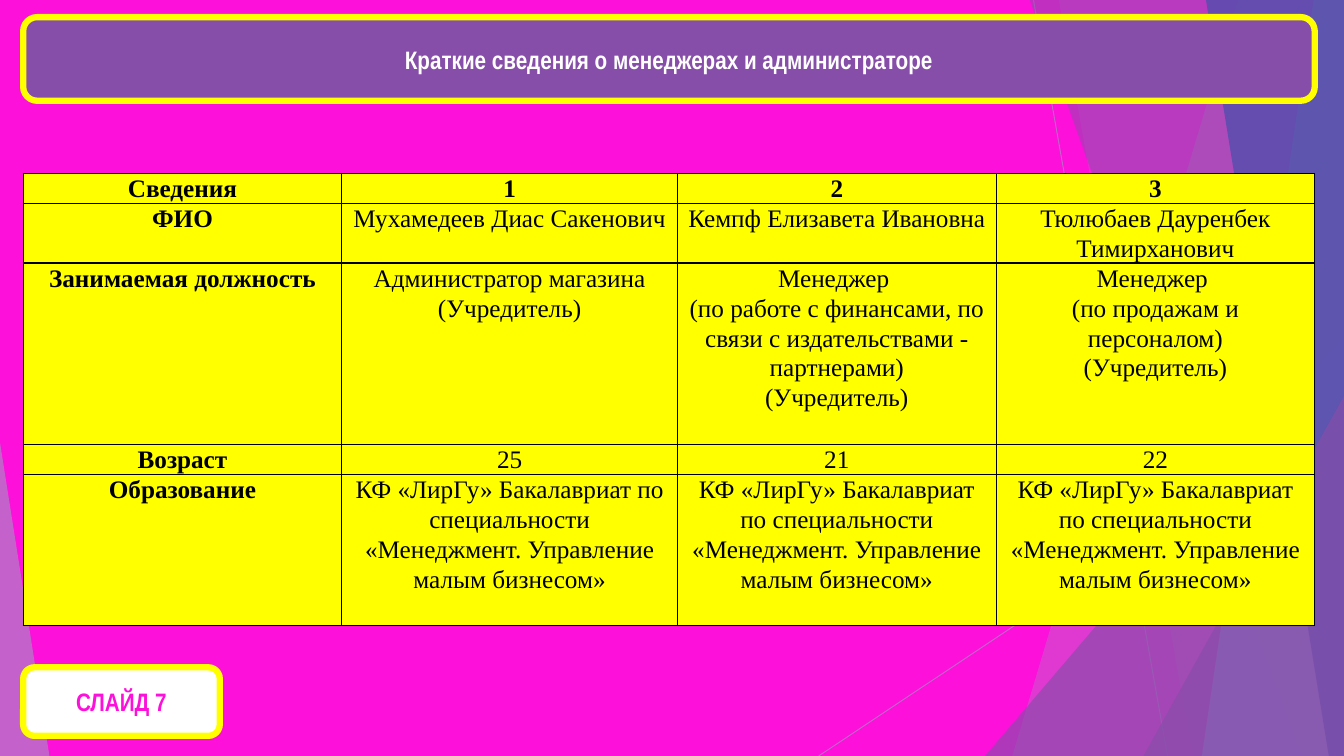
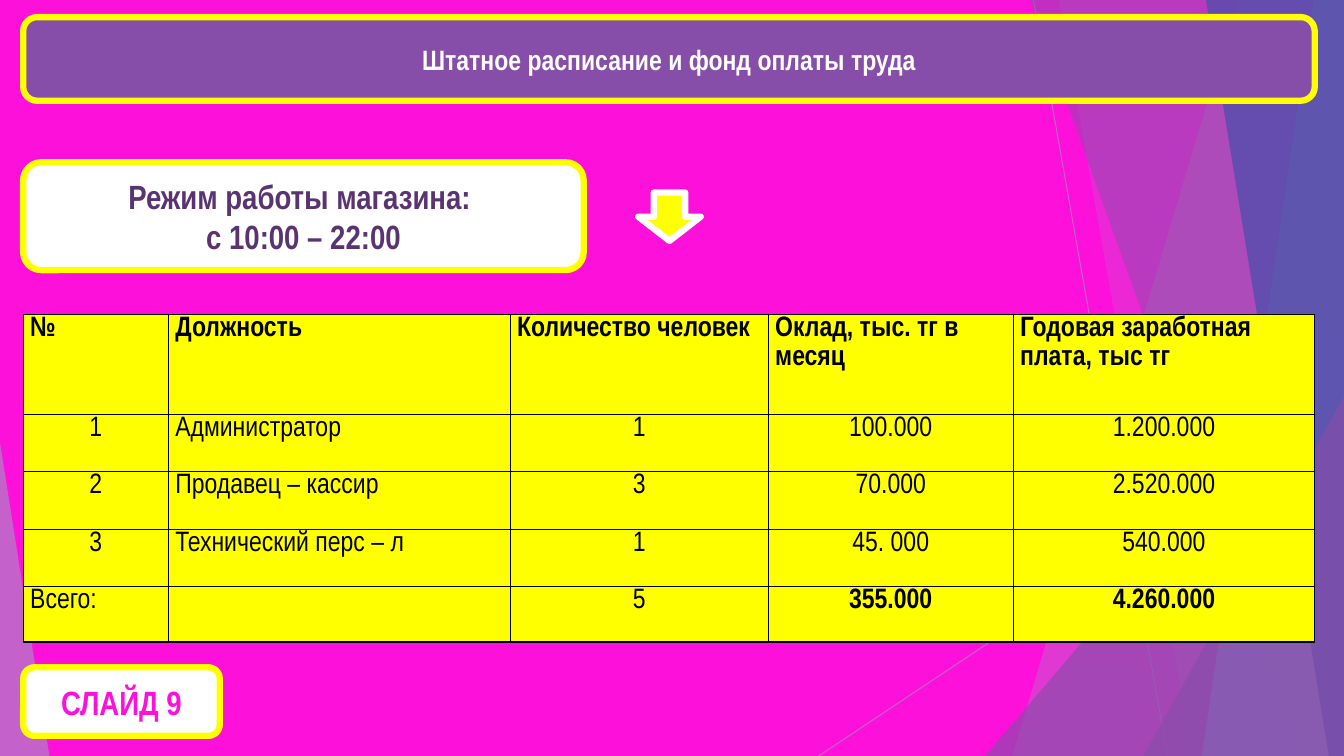
import pptx
import pptx.util
import pptx.dml.color
import pptx.enum.shapes
import pptx.enum.text
import pptx.oxml
import pptx.oxml.ns

RGBColor = pptx.dml.color.RGBColor
MSO_SHAPE = pptx.enum.shapes.MSO_SHAPE
PP_ALIGN = pptx.enum.text.PP_ALIGN
qn = pptx.oxml.ns.qn

PX = 9144  # EMU in one px, 100 px to the inch
WIDTH, HEIGHT = 1333, 750
MARGIN, CONTENT_WIDTH = 23, 1281

MAGENTA = RGBColor(0xFC, 0x10, 0xDA)
YELLOW = RGBColor(0xFF, 0xFF, 0x00)
WHITE = RGBColor(0xFF, 0xFF, 0xFF)
BLACK = RGBColor(0x00, 0x00, 0x00)
PURPLE = RGBColor(0x87, 0x4E, 0xA9)
DARK_PURPLE = RGBColor(0x5A, 0x34, 0x71)
LILAC = RGBColor(0xAD, 0x84, 0xC6)
PERIWINKLE = RGBColor(0x87, 0x84, 0xC7)
INDIGO = RGBColor(0x52, 0x4E, 0xAB)

NARROW = "Arial Narrow"
SERIF = "Times New Roman"

MANAGERS = [
    ["Сведения", "1", "2", "3"],
    ["ФИО", "Мухамедеев Диас Сакенович", "Кемпф Елизавета Ивановна",
     "Тюлюбаев Дауренбек Тимирханович"],
    ["Занимаемая должность",
     "Администратор магазина\n(Учредитель)",
     "Менеджер \n(по работе с финансами, по связи с издательствами - партнерами)"
     "\n(Учредитель)",
     "Менеджер \n(по продажам и персоналом)\n(Учредитель)"],
    ["Возраст", "25", "21", "22"],
    ["Образование"] + 3 * ["КФ «ЛирГу» Бакалавриат по специальности "
                           "«Менеджмент. Управление малым бизнесом»"],
]

STAFF = [
    ["№", "Должность", "Количество человек", "Оклад, тыс. тг в месяц",
     "Годовая заработная плата, тыс тг"],
    ["1", "Администратор", "1", "100.000", "1.200.000"],
    ["2", "Продавец – кассир", "3", "70.000", "2.520.000"],
    ["3", "Технический перс – л", "1", "45. 000", "540.000"],
    ["Всего:", "", "5", "355.000", "4.260.000"],
]


def px(*lengths):
    return [pptx.util.Emu(n * PX) for n in lengths]


def set_alpha(sp, percent):
    for clr in sp._element.spPr.iter(qn("a:srgbClr")):
        alpha = clr.makeelement(qn("a:alpha"), {"val": str(percent * 1000)})
        clr.append(alpha)


def paint(sp, fill, line=None, alpha=None):
    sp.shadow.inherit = False
    sp.fill.solid()
    sp.fill.fore_color.rgb = fill
    if line is None:
        sp.line.fill.background()
    else:
        sp.line.color.rgb = line
        sp.line.width = pptx.util.Pt(4.5)
    if alpha is not None:
        set_alpha(sp, alpha)


def write(tf, text, size, font, color, bold=True, align=PP_ALIGN.CENTER, spacing=None):
    """Fill a text frame, one paragraph for each line of the text."""
    for i, line in enumerate(text.split("\n")):
        p = tf.add_paragraph() if i else tf.paragraphs[0]
        p.alignment = align
        p.line_spacing = spacing
        r = p.add_run()
        r.text = line
        r.font.size = pptx.util.Pt(size)
        r.font.name = font
        r.font.bold = bold
        r.font.color.rgb = color


# Background decoration

def add_ray(slide, x1, y1, x2, y2):
    ray = slide.shapes.add_connector(
        pptx.enum.shapes.MSO_CONNECTOR.STRAIGHT, *px(x1, y1, x2, y2))
    ray.line.color.rgb = LILAC
    ray.line.width = pptx.util.Pt(0.75)
    set_alpha(ray, 70)
    spPr = ray._element.spPr
    spPr.append(spPr.makeelement(qn("a:effectLst"), {}))


def add_facet(slide, top_x, bottom_x, color, alpha):
    """Area between a slanted left edge and the right side of the slide."""
    builder = slide.shapes.build_freeform(top_x, -1, scale=PX)
    builder.add_line_segments([(WIDTH, -1), (WIDTH, HEIGHT), (bottom_x, HEIGHT)])
    paint(builder.convert_to_shape(), color, alpha=alpha)


def add_corner(slide, x, y, width, apex, color, alpha):
    """Triangle standing on the bottom edge of the slide."""
    sp = slide.shapes.add_shape(
        MSO_SHAPE.ISOSCELES_TRIANGLE, *px(x, y, width, HEIGHT - y))
    sp.adjustments[0] = apex
    paint(sp, color, alpha=alpha)


def add_decoration(slide):
    add_ray(slide, 1025, 0, 1158, HEIGHT)
    add_ray(slide, WIDTH, 403, 812, HEIGHT)
    add_facet(slide, 1228, 1004, LILAC, 36)
    add_facet(slide, 1050, 1183, LILAC, 20)
    add_corner(slide, 977, 333, 356, 1, PURPLE, 66)
    add_facet(slide, 1021, 1291, PURPLE, 50)
    add_facet(slide, 1303, 1192, PERIWINKLE, 70)
    add_facet(slide, 1196, 1318, INDIGO, 80)
    add_corner(slide, 1134, 393, 199, 1, PURPLE, 66)
    add_corner(slide, 0, 439, 49, 0, LILAC, 70)


# Content elements

def add_box(slide, y, width, height, fill, text, size, color):
    sp = slide.shapes.add_shape(
        MSO_SHAPE.ROUNDED_RECTANGLE, *px(MARGIN, y, width, height))
    paint(sp, fill, YELLOW)
    sp.text_frame.word_wrap = True
    sp.text_frame.vertical_anchor = pptx.enum.text.MSO_ANCHOR.MIDDLE
    write(sp.text_frame, text, size, NARROW, color)


def add_borders(cell):
    tcPr = cell._tc.get_or_add_tcPr()
    for side in ("L", "R", "T", "B"):
        tcPr.append(pptx.oxml.parse_xml(
            f'<a:ln{side} {pptx.oxml.ns.nsdecls("a")} w="12700"><a:solidFill>'
            f'<a:srgbClr val="{BLACK}"/></a:solidFill></a:ln{side}>'))


def add_grid(slide, y, widths, heights, rows, size, font, is_bold, is_left):
    """Yellow table; is_bold and is_left choose by row and column number."""
    frame = slide.shapes.add_table(
        len(rows), len(widths), *px(MARGIN, y, sum(widths), sum(heights)))
    table = frame.table
    table.first_row = table.horz_banding = False
    for column, width in zip(table.columns, px(*widths)):
        column.width = width
    for row, height in zip(table.rows, px(*heights)):
        row.height = height
    for i, texts in enumerate(rows):
        for j, text in enumerate(texts):
            cell = table.cell(i, j)
            add_borders(cell)
            cell.fill.solid()
            cell.fill.fore_color.rgb = YELLOW
            cell.margin_left, cell.margin_right = px(7, 7)
            cell.margin_top = cell.margin_bottom = 0
            if text:
                align = PP_ALIGN.LEFT if is_left(i, j) else PP_ALIGN.CENTER
                write(cell.text_frame, text, size, font, BLACK, is_bold(i, j), align, 1.07)


def add_slide(prs, title, title_size, number, number_size):
    slide = prs.slides.add_slide(prs.slide_layouts[6])
    add_decoration(slide)
    add_box(slide, 662, 195, 68, WHITE, f"СЛАЙД {number}", number_size, MAGENTA)
    add_box(slide, 17, CONTENT_WIDTH, 83, PURPLE, title, title_size, WHITE)
    return slide


def main():
    prs = pptx.Presentation()
    prs.slide_width, prs.slide_height = px(WIDTH, HEIGHT)
    background = prs.slide_master.background.fill
    background.solid()
    background.fore_color.rgb = MAGENTA

    # Managers
    slide = add_slide(prs, "Краткие сведения о менеджерах и администраторе", 18, 7, 18)
    add_grid(slide, 172, [316, 333, 316, 316], [29, 59, 180, 29, 150],
             MANAGERS, 18, SERIF,
             is_bold=lambda i, j: i == 0 or j == 0,
             is_left=lambda i, j: False)

    # Staff and payroll
    slide = add_slide(prs, "Штатное расписание и фонд оплаты труда", 20, 9, 24)
    total = len(STAFF) - 1
    add_grid(slide, 312, [144, 339, 256, 243, 299], [99, 57, 57, 57, 55],
             STAFF, 20, NARROW,
             is_bold=lambda i, j: i == 0 or (i == total and j >= 3),
             is_left=lambda i, j: i == 0 or j == 1 or (i == total and j == 0))
    arrow = slide.shapes.add_shape(MSO_SHAPE.RIGHT_ARROW, *px(640, 184, 48, 62))
    arrow.rotation = 90
    paint(arrow, YELLOW, WHITE)
    add_box(slide, 161, 556, 107, WHITE,
            "Режим работы магазина: \nс 10:00 – 22:00", 24, DARK_PURPLE)

    prs.save("out.pptx")


if __name__ == "__main__":
    main()
